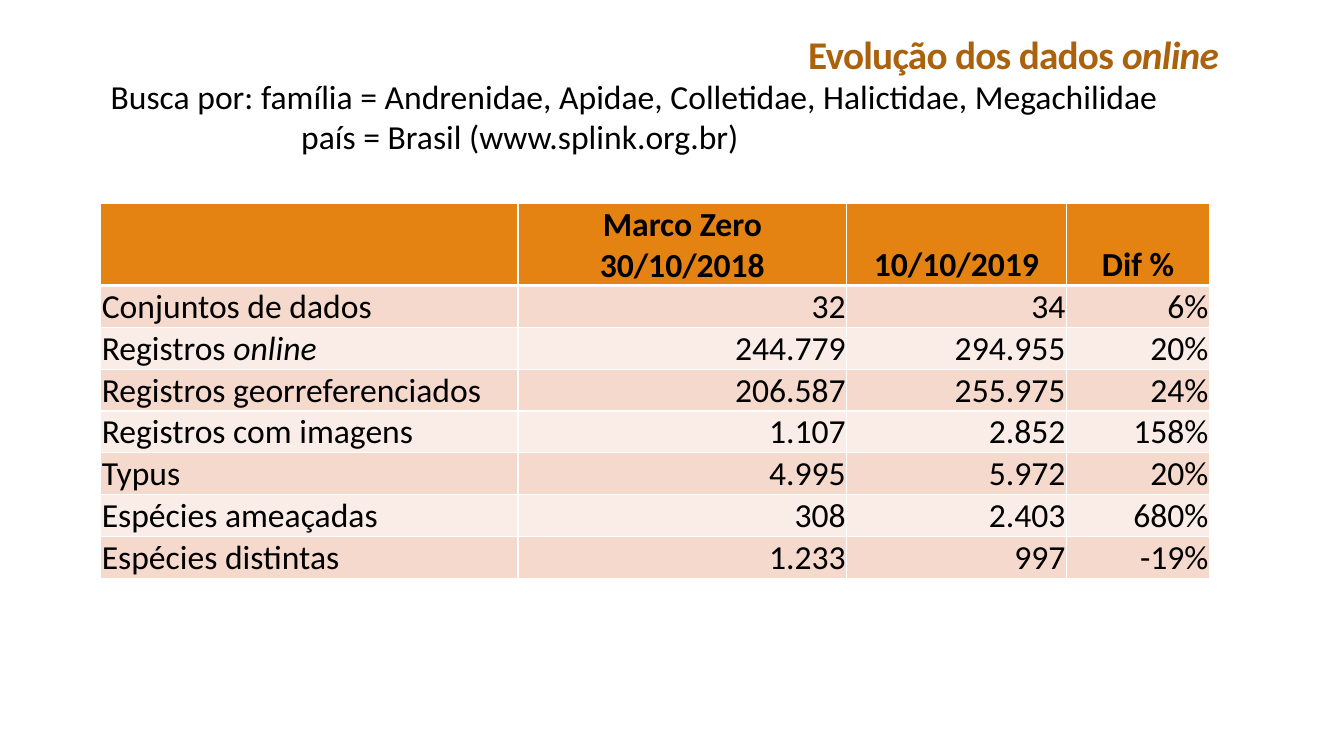
"""Build the slide on the growth of online bee records."""
from typing import NamedTuple

from lxml.etree import SubElement
from pptx import Presentation
from pptx.dml.color import RGBColor
from pptx.enum.text import MSO_ANCHOR as Anchor, PP_ALIGN as Align
from pptx.oxml.ns import qn
from pptx.util import Inches, Length, Pt

SLIDE_WIDTH, SLIDE_HEIGHT = Inches(13.33), Inches(7.5)
GRID_COLUMNS, GRID_ROWS = 40, 30
FONT = "Calibri"
BROWN = RGBColor(0xAB, 0x62, 0x0D)
ORANGE = RGBColor(0xE4, 0x83, 0x12)
PEACH = RGBColor(0xF5, 0xD9, 0xCC)
PALE = RGBColor(0xFA, 0xED, 0xE7)
BLACK = RGBColor(0, 0, 0)
WHITE = RGBColor(0xFF, 0xFF, 0xFF)


class Area(NamedTuple):
    left: float
    top: float
    width: float
    height: float


class Span(NamedTuple):
    text: str
    italic: bool = False


class Style(NamedTuple):
    size: float = 24
    color: RGBColor = BLACK
    bold: bool = False
    align: Align = Align.LEFT
    tracking: float = 0


class Record(NamedTuple):
    label: tuple[Span, ...]
    before: str
    after: str
    change: str


TITLE_AREA = Area(3.57, 0.68, 33, 2.6)
SEARCH_AREA = Area(3, 2.8, 32.07, 3.64)
SEARCH_INDENT = 5.67
TABLE_AREA = Area(3, 8.08, 33, 14.84)
COLUMN_WIDTHS = (12.42, 9.78, 6.54, 4.26)
HEADER_HEIGHT, RECORD_HEIGHT = 3.25, 1.66
THIN, THICK = 1, 3

TITLE = Style(28, BROWN, True, Align.RIGHT, -0.5)
BODY = Style()
HEADER = Style(bold=True, align=Align.CENTER)
NUMBER = Style(align=Align.RIGHT)

SEARCH_LINES = (
    "Busca por: família = Andrenidae, Apidae, Colletidae, Halictidae, Megachilidae",
    "país = Brasil (www.splink.org.br)",
)
HEADINGS = ("", "Marco Zero\n30/10/2018", "10/10/2019", "Dif %")
RECORDS = (
    Record((Span("Conjuntos de dados"),), "32", "34", "6%"),
    Record((Span("Registros "), Span("online", True)), "244.779", "294.955", "20%"),
    Record((Span("Registros georreferenciados"),), "206.587", "255.975", "24%"),
    Record((Span("Registros com imagens"),), "1.107", "2.852", "158%"),
    Record((Span("Typus"),), "4.995", "5.972", "20%"),
    Record((Span("Espécies ameaçadas"),), "308", "2.403", "680%"),
    Record((Span("Espécies distintas"),), "1.233", "997", "-19%"),
)


def across(columns: float) -> Length:
    return Length(round(SLIDE_WIDTH * columns / GRID_COLUMNS))


def down(rows: float) -> Length:
    return Length(round(SLIDE_HEIGHT * rows / GRID_ROWS))


def place(area: Area) -> tuple[Length, Length, Length, Length]:
    return across(area.left), down(area.top), across(area.width), down(area.height)


def write(para, spans: tuple[Span, ...], style: Style) -> None:
    para.alignment = style.align
    font = para.font
    font.name, font.size, font.bold = FONT, Pt(style.size), style.bold
    font.color.rgb = style.color
    for span in spans:
        for index, line in enumerate(span.text.split("\n")):
            if index:
                para.add_line_break()
            run = para.add_run()
            run.text = line
            if span.italic:
                run.font.italic = True
            if style.tracking:
                run._r.get_or_add_rPr().set("spc", str(round(style.tracking * 100)))


def add_box(page, area: Area):
    frame = page.shapes.add_textbox(*place(area)).text_frame
    frame.word_wrap = True
    return frame


def add_title(page) -> None:
    frame = add_box(page, TITLE_AREA)
    frame.vertical_anchor = Anchor.BOTTOM
    para = frame.paragraphs[0]
    para.line_spacing = 0.85
    write(para, (Span("Evolução dos dados "), Span("online", True)), TITLE)


def add_search(page) -> None:
    frame = add_box(page, SEARCH_AREA)
    first, second = frame.paragraphs[0], frame.add_paragraph()
    second._p.get_or_add_pPr().set("marL", str(across(SEARCH_INDENT)))
    for para, line in zip((first, second), SEARCH_LINES):
        write(para, (Span(line),), BODY)


def add_borders(cell, top: float, bottom: float) -> None:
    properties = cell._tc.get_or_add_tcPr()
    sides = {"lnL": THIN, "lnR": THIN, "lnT": top, "lnB": bottom}
    for side, width in sides.items():
        line = SubElement(properties, qn(f"a:{side}"), w=str(Pt(width)))
        fill = SubElement(line, qn("a:solidFill"))
        SubElement(fill, qn("a:srgbClr"), val=str(WHITE))


def fill_cell(cell, spans: tuple[Span, ...], style: Style, row: int) -> None:
    add_borders(cell, THICK if row == 1 else THIN, THICK if row == 0 else THIN)
    cell.fill.solid()
    cell.fill.fore_color.rgb = ORANGE if row == 0 else PEACH if row % 2 else PALE
    cell.vertical_anchor = Anchor.BOTTOM
    cell.margin_left = cell.margin_right = cell.margin_top = Inches(0.01)
    cell.margin_bottom = 0
    write(cell.text_frame.paragraphs[0], spans, style)


def add_records(page) -> None:
    frame = page.shapes.add_table(len(RECORDS) + 1, len(HEADINGS), *place(TABLE_AREA))
    table = frame.table
    for column, width in zip(table.columns, COLUMN_WIDTHS):
        column.width = across(width)
    for index, row in enumerate(table.rows):
        row.height = down(RECORD_HEIGHT if index else HEADER_HEIGHT)
    for column, heading in enumerate(HEADINGS):
        spans = (Span(heading),) if heading else ()
        fill_cell(table.cell(0, column), spans, HEADER, 0)
    for row, record in enumerate(RECORDS, 1):
        fill_cell(table.cell(row, 0), record.label, BODY, row)
        for column, value in enumerate(record[1:], 1):
            fill_cell(table.cell(row, column), (Span(value),), NUMBER, row)


def main() -> None:
    deck = Presentation()
    deck.slide_width, deck.slide_height = SLIDE_WIDTH, SLIDE_HEIGHT
    page = deck.slides.add_slide(deck.slide_layouts[6])
    add_title(page)
    add_records(page)
    add_search(page)
    deck.save("out.pptx")


if __name__ == "__main__":
    main()
